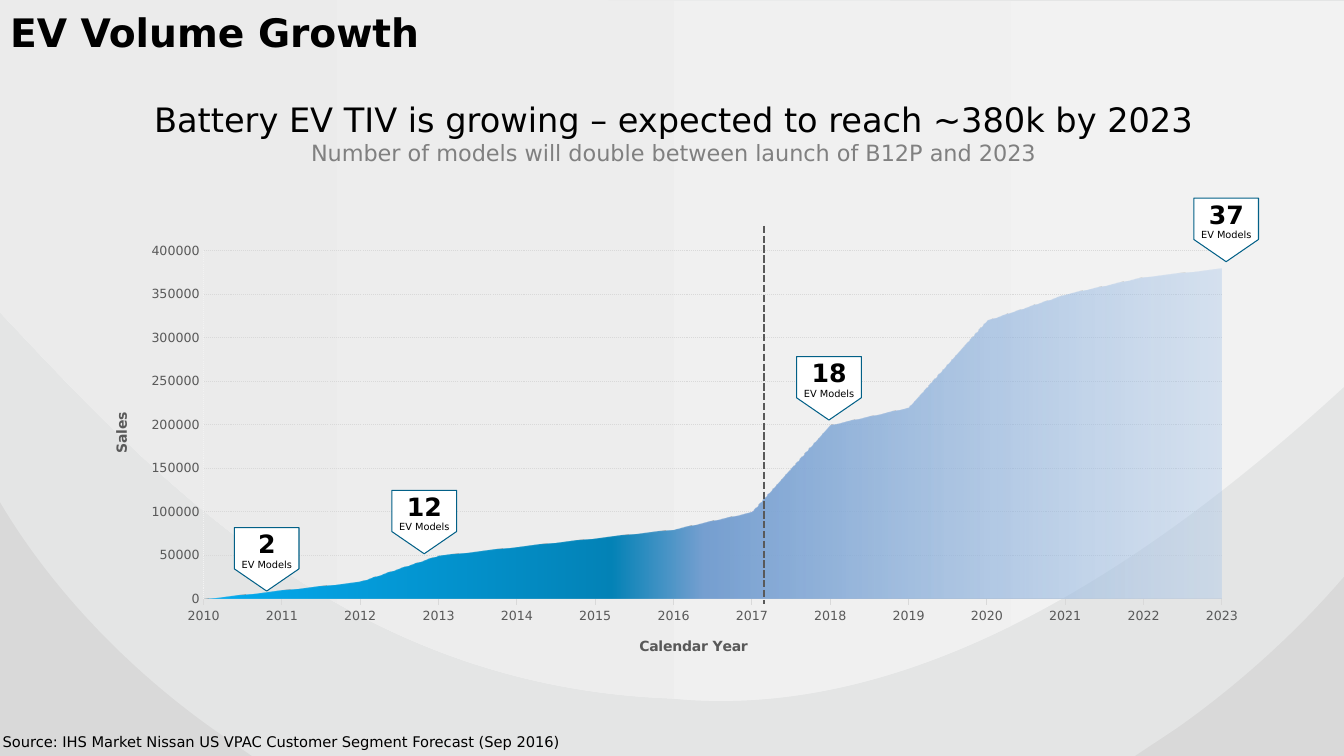
from dataclasses import dataclass

from lxml import etree
from pptx import Presentation
from pptx.chart.data import CategoryChartData
from pptx.dml.color import RGBColor
from pptx.enum.chart import XL_CHART_TYPE, XL_TICK_MARK
from pptx.enum.dml import MSO_LINE
from pptx.enum.shapes import MSO_CONNECTOR, MSO_SHAPE
from pptx.enum.text import MSO_ANCHOR, MSO_AUTO_SIZE, PP_ALIGN
from pptx.oxml.ns import qn
from pptx.util import Cm, Pt

AREA = XL_CHART_TYPE.AREA
OUT, NONE = XL_TICK_MARK.OUTSIDE, XL_TICK_MARK.NONE
DOT, DASH = MSO_LINE.ROUND_DOT, MSO_LINE.SQUARE_DOT
STRAIGHT = MSO_CONNECTOR.STRAIGHT
RECT, PLATE = MSO_SHAPE.RECTANGLE, MSO_SHAPE.PENTAGON
TOP, MIDDLE = MSO_ANCHOR.TOP, MSO_ANCHOR.MIDDLE
FIXED, GROW = MSO_AUTO_SIZE.NONE, MSO_AUTO_SIZE.SHAPE_TO_FIT_TEXT
LEFT, CENTER = PP_ALIGN.LEFT, PP_ALIGN.CENTER


@dataclass
class Theme:
    font: str = "DejaVu Sans"
    ink: str = "000000"
    mute: str = "808080"
    axis: str = "595959"
    grid: str = "D9D9D9"
    pale: str = "F2F2F2"
    white: str = "FFFFFF"
    edge: str = "026087"
    band: tuple = ((0, "E4E5E5", 100), (100, "E6E8E8", 100))
    bowl: tuple = ((0, "F2F2F2", 100), (100, "EBEBEB", 100))
    area: tuple = ((0, "04ABF0", 100), (40, "0382B6", 100),
                   (49, "769FD0", 100), (100, "A7C5E9", 38))
    title: float = 28
    head: float = 24
    sub: float = 16
    count: float = 18
    tiny: float = 7
    note: float = 10.5
    label: float = 10
    tick: float = 9


def rgb(code):
    return RGBColor.from_string(code)


def style(font, name, size, color, bold=False):
    font.name, font.size, font.bold = name, Pt(size), bold
    font.color.rgb = rgb(color)


def write(frame, rows, font, align=LEFT, anchor=TOP, space=None, fit=GROW):
    frame.word_wrap = True
    frame.auto_size = fit
    frame.vertical_anchor = anchor
    for i, (text, size, color, bold) in enumerate(rows):
        para = frame.paragraphs[0] if i == 0 else frame.add_paragraph()
        para.alignment = align
        para.line_spacing = space
        run = para.add_run()
        run.text = text
        style(run.font, font, size, color, bold)


def blend(fill, root, stops, angle):
    fill.gradient()
    fill.gradient_angle = angle
    group = next(root.iter(qn("a:gsLst")))
    for old in list(group):
        group.remove(old)
    for pos, color, alpha in stops:
        stop = etree.SubElement(group, qn("a:gs"), pos=str(pos * 1000))
        tint = etree.SubElement(stop, qn("a:srgbClr"), val=color)
        if alpha < 100:
            etree.SubElement(tint, qn("a:alpha"), val=str(alpha * 1000))


def place(root, index, **spots):
    old = root.find(qn("c:layout"))
    if old is not None:
        root.remove(old)
    layout = etree.Element(qn("c:layout"))
    root.insert(index, layout)
    manual = etree.SubElement(layout, qn("c:manualLayout"))
    if "w" in spots:
        etree.SubElement(manual, qn("c:layoutTarget"), val="inner")
    for mode in ("xMode", "yMode"):
        etree.SubElement(manual, qn("c:" + mode), val="edge")
    for key, value in spots.items():
        etree.SubElement(manual, qn("c:" + key), val=str(value))


def bend(root, steps):
    lines = list(root.iter(qn("a:lnTo")))
    for kind, points in steps:
        part, lines = lines[:len(points)], lines[len(points):]
        if kind == "C":
            arc = etree.Element(qn("a:cubicBezTo"))
            part[0].addprevious(arc)
            for line in part:
                arc.append(line[0])
                line.getparent().remove(line)


class Page:
    def __init__(self, slide, theme):
        self.slide, self.theme = slide, theme
        self.shapes = slide.shapes

    def shape(self, kind, box, fill, line=None, turn=0, adj=None):
        item = self.shapes.add_shape(kind, *map(Cm, box))
        item.shadow.inherit = False
        item.fill.solid()
        item.fill.fore_color.rgb = rgb(fill)
        item.rotation = turn
        if adj is not None:
            item.adjustments[0] = adj
        if line:
            item.line.color.rgb = rgb(line)
            item.line.width = Pt(0.75)
        else:
            item.line.fill.background()

    def free(self, start, steps, stops):
        pen = self.shapes.build_freeform(*map(Cm, start), scale=1.0)
        spots = [(Cm(x), Cm(y)) for _, points in steps for x, y in points]
        pen.add_line_segments(spots, close=True)
        item = pen.convert_to_shape()
        item.shadow.inherit = False
        item.line.fill.background()
        bend(item._element, steps)
        blend(item.fill, item._element, stops, 180)

    def title(self, text, box):
        item = self.shapes.title
        self.shapes._spTree.append(item._element)
        item.left, item.top, item.width, item.height = map(Cm, box)
        t = self.theme
        write(item.text_frame, [(text, t.title, t.ink, True)], t.font,
              space=0.9, fit=FIXED)

    def text(self, rows, box, **form):
        item = self.shapes.add_textbox(*map(Cm, box))
        write(item.text_frame, rows, self.theme.font, **form)

    def line(self, x, top, end):
        item = self.shapes.add_connector(STRAIGHT, *map(Cm, (x, top, x, end)))
        item.line.color.rgb = rgb(self.theme.axis)
        item.line.width = Pt(1.75)
        item.line.dash_style = DASH
        etree.SubElement(item._element.spPr, qn("a:effectLst"))

    def flag(self, count, x, y):
        t = self.theme
        self.shape(PLATE, (x, y, 1.6, 1.63), t.white, t.edge, 90, 0.35)
        rows = [(count, t.count, t.ink, True), ("EV Models", t.tiny, t.ink, False)]
        self.text(rows, (x - 0.59, y - 0.1, 2.79, 1.32), align=CENTER, anchor=MIDDLE)

    def axis(self, axis, name, tick, color, x, y):
        t = self.theme
        axis.has_title = True
        run = axis.axis_title.text_frame.paragraphs[0].add_run()
        run.text = name
        style(run.font, t.font, t.label, t.axis, True)
        place(axis.axis_title._element, 1, x=x, y=y)
        style(axis.tick_labels.font, t.font, t.tick, t.axis)
        axis.major_tick_mark, axis.minor_tick_mark = tick, NONE
        axis.format.line.color.rgb = rgb(color)
        axis.format.line.width = Pt(0.75)

    def chart(self, years, sales, box):
        t = self.theme
        data = CategoryChartData(number_format="0")
        data.categories = years
        data.add_series("Series 1", sales)
        chart = self.shapes.add_chart(AREA, *map(Cm, box), data).chart
        chart.has_title = chart.has_legend = False
        style(chart.font, t.font, t.label, t.ink)
        plot = chart.plots[0]
        plot.vary_by_categories = False
        row = plot.series[0]
        blend(row.format.fill, row._element, t.area, 0)
        row.format.line.fill.background()
        cat, val = chart.category_axis, chart.value_axis
        self.axis(cat, "Calendar Year", OUT, t.grid, 0.47, 0.91)
        self.axis(val, "Sales", NONE, t.pale, 0.02, 0.4)
        val.format.line.dash_style = DOT
        val.minimum_scale, val.maximum_scale, val.major_unit = 0, 400000, 50000
        val.has_major_gridlines = True
        grid = val.major_gridlines.format.line
        grid.color.rgb, grid.width, grid.dash_style = rgb(t.grid), Pt(0.75), DOT
        val._element.find(qn("c:crossBetween")).set("val", "midCat")
        area = next(chart._chartSpace.iter(qn("c:plotArea")))
        place(area, 0, x=0.1, y=0.04, w=0.87, h=0.79)


def main():
    deck = Presentation()
    deck.slide_width, deck.slide_height = Cm(33.87), Cm(19.05)
    t = Theme()
    page = Page(deck.slides.add_slide(deck.slide_layouts[5]), t)
    page.shape(RECT, (0, 7.06, 33.87, 11.99), t.grid)
    page.free((0, 0), [
        ("L", [(33.87, 0)]),
        ("C", [(33.86, 9.68), (33.9, 9.63), (33.87, 14.53)]),
        ("C", [(32.74, 15.85), (31.29, 17.2), (29.64, 18.36)]),
        ("L", [(28.6, 19.05), (6.35, 19.05), (5.33, 18.34)]),
        ("C", [(2.95, 16.64), (1.14, 14.58), (0, 12.65)])], t.band)
    page.free((0, 7.87), [
        ("C", [(3.89, 12), (8.74, 17.3), (16.92, 17.6)]),
        ("C", [(23.29, 18.24), (29.41, 13.84), (33.87, 9.75)]),
        ("C", [(33.98, 6.45), (33.87, 3.33), (33.87, 0.03)]),
        ("L", [(0, 0)])], t.bowl)
    page.title("EV Volume Growth", (0, 0.22, 28.22, 2.97))
    sales = [0, 10, 20, 50, 60, 70, 80, 100, 200, 220, 320, 350, 370, 380]
    page.chart([str(year) for year in range(2010, 2024)],
               [1000 * value for value in sales], (2.18, 5.88, 29.5, 11.1))
    page.line(19.25, 5.69, 15.21)
    for flag in (("2", 5.92, 13.28), ("12", 9.89, 12.34),
                 ("37", 30.1, 4.98), ("18", 20.09, 8.97)):
        page.flag(*flag)
    page.text([("Battery EV TIV is growing – expected to reach ~380k by 2023",
                t.head, t.ink, False),
               ("Number of models will double between launch of B12P and 2023",
                t.sub, t.mute, False)], (3.05, 2.36, 27.86, 1.96), align=CENTER)
    page.text([("Source: IHS Market Nissan US VPAC Customer Segment Forecast (Sep 2016)",
                t.note, t.ink, False)], (-0.18, 18.34, 16.61, 0.71))
    deck.save("out.pptx")


if __name__ == "__main__":
    main()
